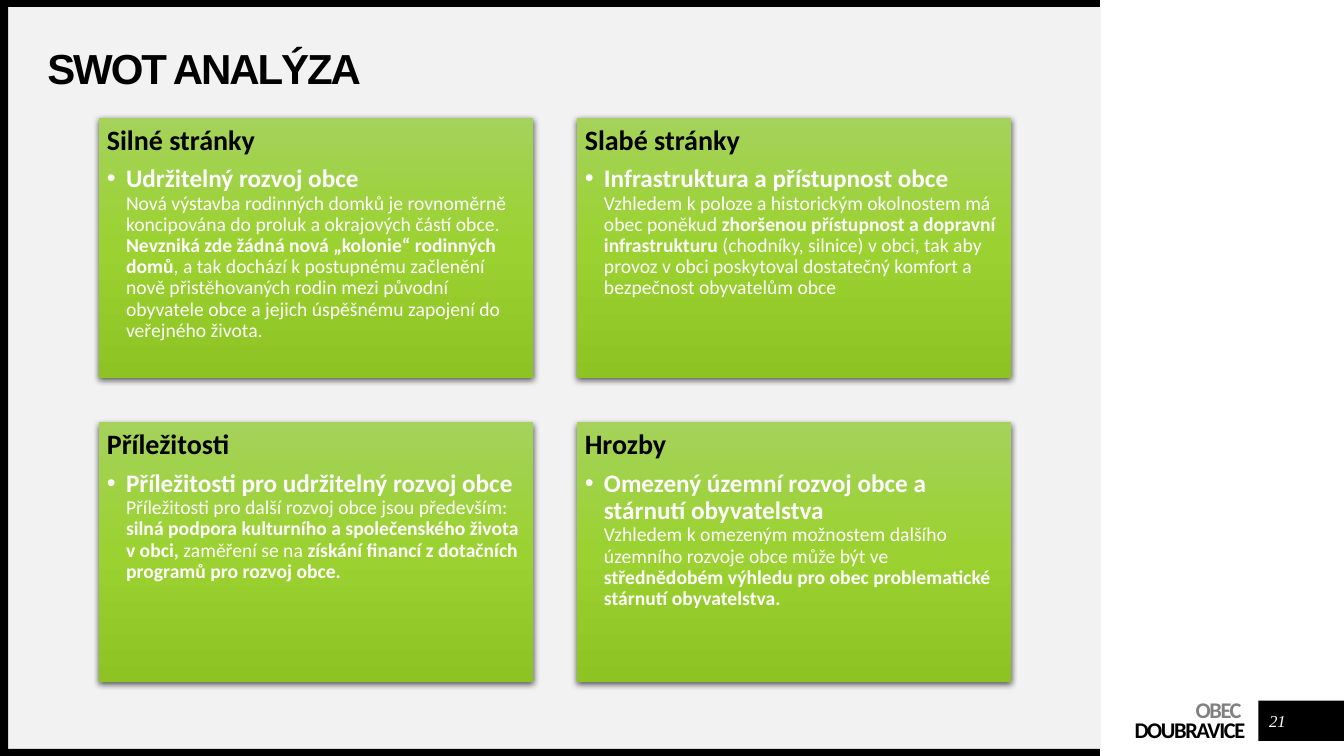
from lxml import etree
from pptx import Presentation
from pptx.dml.color import RGBColor
from pptx.enum import shapes, text
from pptx.oxml import parse_xml
from pptx.util import Inches, Pt

NS = 'xmlns:a="http://schemas.openxmlformats.org/drawingml/2006/main"'
CARD_STOPS = [(0, "A4D25A"), (50, "9BD231"), (100, "8DC323")]

# Heading, topic, then (words, bold) pieces for each quadrant
SWOT = [
    ("Silné stránky", "Udržitelný rozvoj obce", [
        ("Nová výstavba rodinných domků je rovnoměrně koncipována do proluk a okrajových částí obce. ", False),
        ("Nevzniká zde žádná nová „kolonie“ rodinných domů", True),
        (", a tak dochází k postupnému začlenění nově přistěhovaných rodin mezi původní obyvatele obce "
         "a jejich úspěšnému zapojení do veřejného života.", False)]),
    ("Slabé stránky", "Infrastruktura a přístupnost obce", [
        ("Vzhledem k poloze a historickým okolnostem má obec poněkud ", False),
        ("zhoršenou přístupnost a dopravní infrastrukturu ", True),
        ("(chodníky, silnice) v obci, tak aby provoz v obci poskytoval dostatečný komfort "
         "a bezpečnost obyvatelům obce", False)]),
    ("Příležitosti", "Příležitosti pro udržitelný rozvoj obce", [
        ("Příležitosti pro další rozvoj obce jsou především: ", False),
        ("silná podpora kulturního a společenského života v obci, ", True),
        ("zaměření se na ", False),
        ("získání ﬁnancí z dotačních programů pro rozvoj obce.", True)]),
    ("Hrozby", "Omezený územní rozvoj obce a stárnutí obyvatelstva", [
        ("Vzhledem k omezeným možnostem dalšího územního rozvoje obce může být ve ", False),
        ("střednědobém výhledu pro obec problematické stárnutí obyvatelstva.", True)]),
]


def color(value):
    return RGBColor.from_string(value)


def add_rect(slide, left, top, width, height, fill):
    rect = slide.shapes.add_shape(shapes.MSO_SHAPE.RECTANGLE, Inches(left), Inches(top),
                                  Inches(width), Inches(height))
    rect.shadow.inherit = False
    rect.line.fill.background()
    rect.fill.solid()
    rect.fill.fore_color.rgb = color(fill)
    return rect


def set_frame(frame, insets, anchor=text.MSO_ANCHOR.TOP):
    frame.word_wrap = True
    frame.vertical_anchor = anchor
    (frame.margin_left, frame.margin_top,
     frame.margin_right, frame.margin_bottom) = [Inches(inset) for inset in insets]
    return frame


def add_label(slide, left, top, width, height, insets=(0, 0, 0, 0), anchor=text.MSO_ANCHOR.MIDDLE):
    label = slide.shapes.add_textbox(Inches(left), Inches(top), Inches(width), Inches(height))
    return set_frame(label.text_frame, insets, anchor).paragraphs[0]


def add_run(paragraph, words, size, ink, bold=True, font="Calibri", spacing=0, italic=False):
    run = paragraph.add_run()
    run.text = words
    run.font.size = Pt(size)
    run.font.name = font
    run.font.bold = bold
    run.font.italic = italic
    run.font.color.rgb = color(ink)
    if spacing:
        run._r.get_or_add_rPr().set("spc", str(int(spacing * 100)))


def style_card(card):
    """Three-stop vertical gradient and a soft shadow below."""
    properties = card._element.spPr
    stops = "".join(f'<a:gs pos="{pos * 1000}"><a:srgbClr val="{tone}"/></a:gs>' for pos, tone in CARD_STOPS)
    gradient = parse_xml(f'<a:gradFill {NS} rotWithShape="1"><a:gsLst>{stops}</a:gsLst>'
                         '<a:lin ang="5400000" scaled="0"/></a:gradFill>')
    solid = properties.find("{*}solidFill")
    properties.replace(solid, gradient)
    properties.find("{*}effectLst").append(parse_xml(
        f'<a:outerShdw {NS} blurRad="{Pt(4.5)}" dist="{Pt(1.5)}" dir="5400000" rotWithShape="0">'
        '<a:srgbClr val="000000"><a:alpha val="63000"/></a:srgbClr></a:outerShdw>'))


def add_bullet(paragraph, indent):
    properties = paragraph._p.get_or_add_pPr()
    properties.set("marL", str(Inches(indent)))
    properties.set("indent", str(-Inches(indent)))
    properties.append(parse_xml(f'<a:buFont {NS} typeface="Arial"/>'))
    properties.append(parse_xml(f'<a:buChar {NS} char="•"/>'))


def add_card(slide, left, top, width, height, heading, topic, pieces):
    card = add_rect(slide, left, top, width, height, CARD_STOPS[1][1])
    style_card(card)
    frame = set_frame(card.text_frame, (0.08,) * 4)
    title, body = frame.paragraphs[0], frame.add_paragraph()
    for paragraph in (title, body):
        paragraph.alignment = text.PP_ALIGN.LEFT
        paragraph.line_spacing = 0.9
    title.space_after = Pt(7)
    add_run(title, heading, 20, "000000")
    body.level = 1
    add_bullet(body, 0.19)
    add_run(body, topic, 18, "FFFFFF")
    body.add_line_break()
    for words, bold in pieces:
        add_run(body, words, 14, "FFFFFF", bold)


def add_swot_grid(slide, left, top, width, height):
    card_width, card_height = 4.31, 2.58
    for index, quadrant in enumerate(SWOT):
        row, column = divmod(index, 2)
        add_card(slide, left + column * (width - card_width), top + row * (height - card_height),
                 card_width, card_height, *quadrant)


def add_background(slide, width, height):
    border = 0.07
    add_rect(slide, 0.08, border, width - 0.07, height - 2 * border, "F2F2F2")
    for top in (height - border, 0):
        add_rect(slide, 0, top, width, border, "000000")
    add_rect(slide, 0, 0, 0.08, height, "000000")


def add_title(slide, left, top, width, height):
    title = add_label(slide, left, top, width, height)
    title.line_spacing = 0.9
    add_run(title, "SWOT ANALÝZA", 30, "000000", font="Arial", spacing=-1.5)


def add_footer(slide, left, top, width, height):
    # Municipality name
    village = add_label(slide, left, top, 1.82, height, (0, 0.04, 0, 0), text.MSO_ANCHOR.TOP)
    village.alignment = text.PP_ALIGN.RIGHT
    village.line_spacing = Pt(14)
    add_run(village, "OBEC ", 16, "808080", spacing=-1)
    village.add_line_break()
    add_run(village, " DOUBRAVICE", 16, "000000", spacing=-1)
    # Page number
    add_rect(slide, left + 1.95, top + 0.01, width - 1.95, 0.4, "000000")
    number = add_label(slide, left + 1.99, top + 0.06, 0.3, 0.3)
    number.alignment = text.PP_ALIGN.CENTER
    add_run(number, "21", 12, "FFFFFF", False, "Times New Roman", italic=True)


def main():
    deck = Presentation()
    deck.slide_width, deck.slide_height = Inches(13.33), Inches(7.5)
    slide = deck.slides.add_slide(deck.slide_layouts[6])
    add_background(slide, 10.91, 7.5)
    add_footer(slide, 10.53, 6.94, 2.8, 0.44)
    add_title(slide, 0.47, 0.47, 10.06, 0.47)
    add_swot_grid(slide, 0.98, 1.17, 9.05, 5.6)
    deck.save("out.pptx")


if __name__ == "__main__":
    main()
